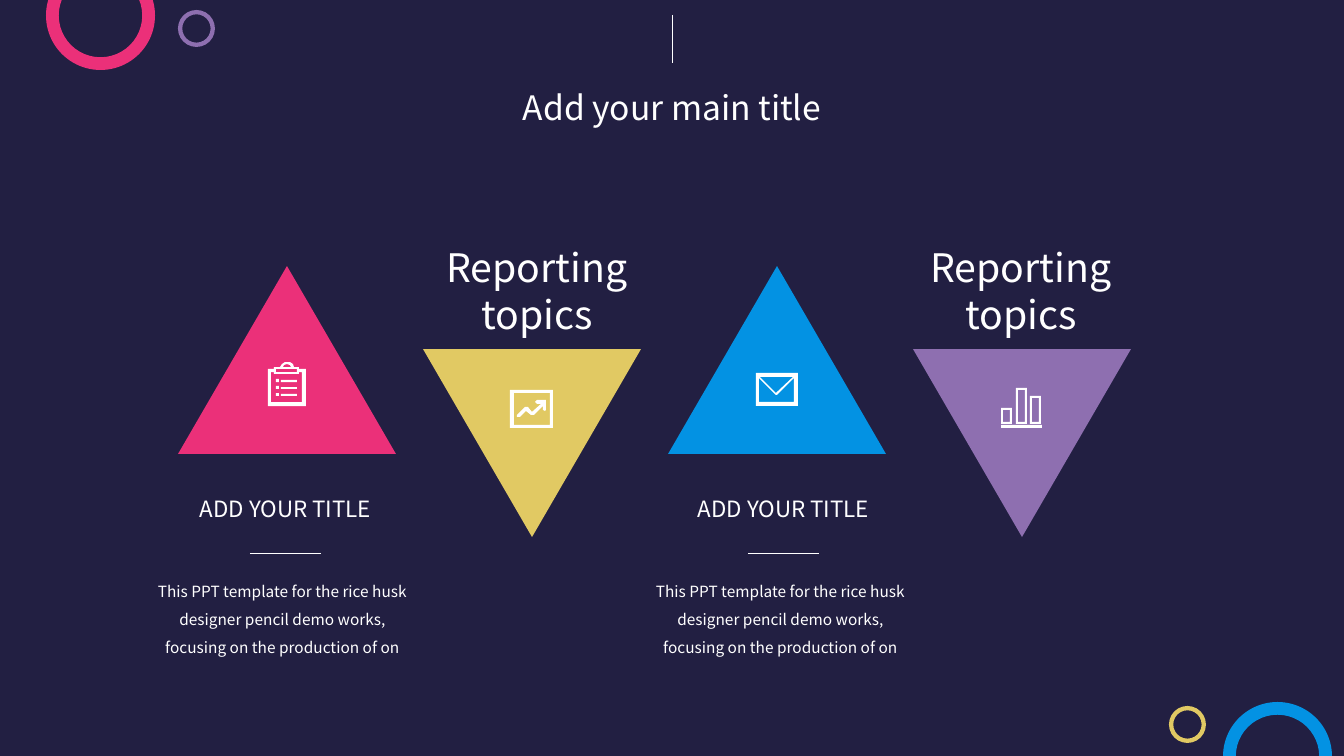
from lxml.etree import SubElement
from pptx import Presentation
from pptx.dml.color import RGBColor
from pptx.enum.shapes import MSO_CONNECTOR as LINE, MSO_SHAPE as SHAPE
from pptx.enum.text import MSO_ANCHOR as ANCHOR, MSO_AUTO_SIZE as AUTO, PP_ALIGN as ALIGN
from pptx.oxml.ns import qn
from pptx.util import Emu, Pt

SCALE = 12192000 / 1344  # EMU per px
FONT = "Noto Sans CJK SC"
COLORS = {"navy": "221F42", "pink": "EB3079", "blue": "0392E3",
          "purple": "8E6FB0", "yellow": "E1C963", "white": "FFFFFF"}
RGB = {name: RGBColor.from_string(value) for name, value in COLORS.items()}


def px(*lengths):
    return [Emu(round(v * SCALE)) for v in lengths]


def rect(left, top, right, bottom):
    return [(left, top), (right, top), (right, bottom), (left, bottom)]


prs = Presentation()
prs.slide_width, prs.slide_height = px(1344, 756)
slide = prs.slides.add_slide(prs.slide_layouts[5])
slide.background.fill.solid()
slide.background.fill.fore_color.rgb = RGB["navy"]
shapes = slide.shapes

# Corner rings and the row of triangles
rings = [(46, -39, 109, "pink"), (1223, 702, 109, "blue"),
         (178, 10, 37, "purple"), (1169, 706, 37, "yellow")]
figures = [(SHAPE.DONUT, x, y, d, d, color, 0) for x, y, d, color in rings]
for i, color in enumerate(["pink", "yellow", "blue", "purple"]):
    down = i % 2
    figures.append((SHAPE.ISOSCELES_TRIANGLE, 178 + 245 * i, 349 if down else 266,
                    218, 188, color, 180 * down))

for kind, x, y, w, h, color, rotation in figures:
    sp = shapes.add_shape(kind, *px(x, y, w, h))
    sp.shadow.inherit = False
    sp.fill.solid()
    sp.fill.fore_color.rgb = RGB[color]
    sp.line.fill.background()
    sp.rotation = rotation
    if kind == SHAPE.DONUT:
        sp.adjustments[0] = 0.117

# Icons: each is a list of contours, inner ones cut holes
clipboard = [
    [(268, 369), (274, 369), (274, 367), (280, 367), (282, 364), (285, 362), (290, 362),
     (293, 364), (294, 367), (299, 367), (299, 369), (306, 369), (306, 406), (268, 406)],
    [(283, 367), (284, 365), (287, 364), (290, 365), (291, 367)],
    rect(276, 369, 297, 372),
    [(302, 402), (271, 402), (271, 372), (274, 372), (274, 374),
     (299, 374), (299, 372), (302, 372)],
]
for y in range(379, 394, 7):
    clipboard += [rect(276, y, 279, y + 3), rect(281, y + 1, 297, y + 3)]

trend = [
    rect(510, 390, 553, 428),
    rect(514, 393, 550, 425),
    [(537, 404), (541, 404), (532, 412), (528, 407), (525, 407), (517, 415),
     (517, 417), (520, 417), (526, 411), (531, 415), (534, 415), (543, 406),
     (543, 410), (545, 411), (546, 410), (546, 400), (537, 400), (535, 402)],
]
envelope = [
    rect(756, 373, 798, 406),
    [(794, 378), (777, 395), (776, 395), (759, 378), (759, 402), (794, 402)],
    [(793, 377), (760, 377), (776, 393)],
]
bars = [rect(1001, 425, 1042, 428)]
for x, y in [(1001, 408), (1016, 388), (1030, 396)]:
    bars += [rect(x, y, x + 11, 424), rect(x + 2, y + 2, x + 9, 422)]

for icon in [clipboard, trend, envelope, bars]:
    builder = shapes.build_freeform(*icon[0][0], scale=SCALE)
    for n, contour in enumerate(icon):
        if n:
            builder.move_to(*contour[0])
        builder.add_line_segments(contour[1:], close=True)
    sp = builder.convert_to_shape()
    sp.shadow.inherit = False
    sp.fill.solid()
    sp.fill.fore_color.rgb = RGB["white"]
    sp.line.fill.background()

# Thin rules
for ends in [(672, 15, 672, 63), (250, 553, 321, 553), (748, 553, 819, 553)]:
    rule = shapes.add_connector(LINE.STRAIGHT, *px(*ends))
    rule.line.width = Pt(0.5)
    rule.line.color.rgb = RGB["white"]
    SubElement(rule._element.spPr, qn("a:effectLst"))

# Title, captions and headings
texts = [(shapes.title, "Add your main title", (491, 82, 362, 50), 24, 1)]
body = ("This PPT template for the rice husk designer pencil demo works, "
        "focusing on the production of on")
for dx in (0, 498):
    texts += [(None, "ADD YOUR TITLE", (174 + dx, 490, 223, 37), 16, 1),
              (None, body, (142 + dx, 568, 281, 94), 11, 1.5)]
for x in (420, 904):
    texts.append((None, "Reporting topics", (x, 238, 234, 57), 28, 1))

for sp, text, place, size, spacing in texts:
    sp = sp or shapes.add_textbox(*px(*place))
    sp.left, sp.top, sp.width, sp.height = px(*place)
    tf = sp.text_frame
    frame_format = {"word_wrap": True, "auto_size": AUTO.SHAPE_TO_FIT_TEXT,
                    "vertical_anchor": ANCHOR.TOP}
    for name, value in frame_format.items():
        setattr(tf, name, value)
    p = tf.paragraphs[0]
    p.alignment = ALIGN.CENTER
    p.line_spacing = float(spacing)
    r = p.add_run()
    r.text = text
    for name, value in {"name": FONT, "size": Pt(size)}.items():
        setattr(r.font, name, value)
    r.font.color.rgb = RGB["white"]

prs.save("out.pptx")
